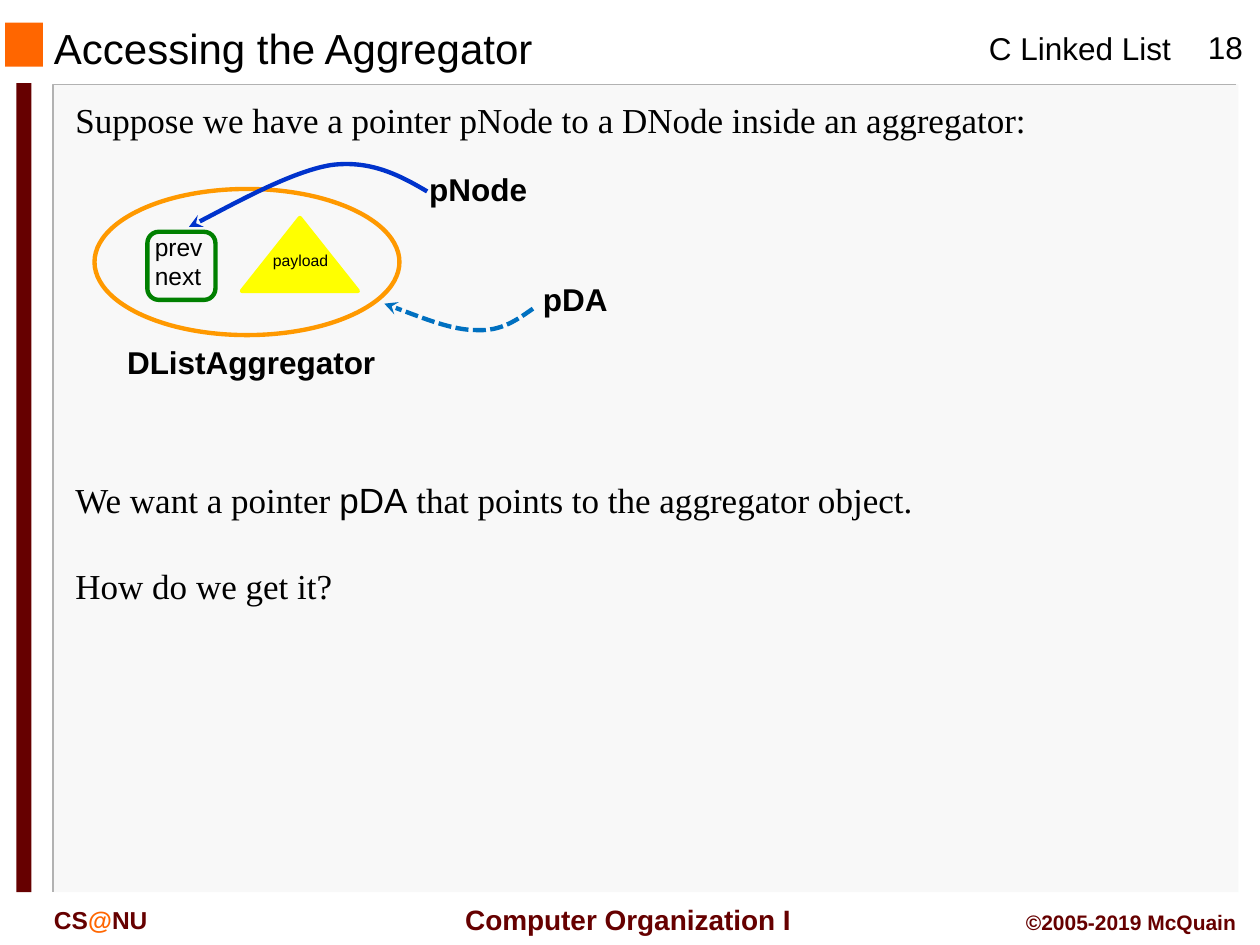
from pptx import Presentation
from pptx.dml.color import RGBColor
from pptx.enum.dml import MSO_LINE
from pptx.enum.shapes import MSO_SHAPE
from pptx.enum.text import MSO_ANCHOR, PP_ALIGN
from pptx.oxml.ns import qn
from pptx.util import Inches, Pt
from lxml.etree import SubElement

C = {"black": "000000", "maroon": "660000", "orange": "FF6600", "panel": "F8F8F8",
     "grey": "B2B2B2", "amber": "FF9900", "green": "008000", "yellow": "FFFF00",
     "blue": "0033CC", "sky": "0070C0"}
SANS, SERIF = "Arial", "Times New Roman"
LEFT, CENTER, RIGHT = PP_ALIGN.LEFT, PP_ALIGN.CENTER, PP_ALIGN.RIGHT
MIDDLE = MSO_ANCHOR.MIDDLE

# kind, box, fill, line
FRAME = [
    (MSO_SHAPE.RECTANGLE, (0.43, 0.67, 9.4, 6.41), "panel", None),
    (MSO_SHAPE.RECTANGLE, (0.04, 0.18, 0.3, 0.35), "orange", None),
    (MSO_SHAPE.RECTANGLE, (0.13, 0.66, 0.12, 6.42), "maroon", None),
]
AGGREGATOR = [
    (MSO_SHAPE.OVAL, (0.75, 1.5, 2.42, 1.16), None, "amber"),
    (MSO_SHAPE.ROUNDED_RECTANGLE, (1.17, 1.84, 0.54, 0.54), None, "green"),
    (MSO_SHAPE.ISOSCELES_TRIANGLE, (1.92, 1.73, 0.92, 0.58), "yellow", "yellow"),
]
PANEL_EDGE = [(9.81, 0.67), (0.42, 0.67), (0.42, 7.08)]

# start point, then three points for each Bezier segment
NODE_POINTER = [(3.39, 1.52), (3.17, 1.39), (2.94, 1.27), (2.63, 1.31),
                (2.31, 1.36), (1.69, 1.71), (1.5, 1.8)]
DA_POINTER = [(4.23, 2.45), (4.1, 2.54), (3.98, 2.63), (3.78, 2.62),
              (3.59, 2.62), (3.32, 2.51), (3.05, 2.41)]

# paragraphs are lists of (text, overrides) runs
TEXTS = [
    ((7.75, 0.18, 1.66, 0.4), [[("C Linked List", {})]], dict(wrap=False)),
    ((3.53, 7.11, 2.91, 0.37), [[("Computer Organization I", {})]],
     dict(size=16, color="maroon", bold=True, align=CENTER, anchor=MIDDLE)),
    ((9.39, 0.17, 0.67, 0.4), [[("18", {})]], dict(align=CENTER)),
    ((0.33, 7.13, 1.5, 0.33), [[("CS", {}), ("@", {"color": "orange"}), ("NU", {})]],
     dict(size=14, color="maroon", bold=True)),
    ((7.83, 7.17, 2.08, 0.3), [[("©2005-2019 McQuain", {})]],
     dict(size=12, color="maroon", bold=True, align=RIGHT)),
    ((0.33, 0.19, 6.33, 0.38), [[("Accessing the Aggregator", {})]],
     dict(size=24, anchor=MIDDLE)),
    ((0.5, 0.73, 9.17, 0.44),
     [[("Suppose we have a pointer pNode to a DNode inside an aggregator:", {})]],
     dict(size=20, font=SERIF)),
    ((0.5, 3.75, 9.17, 1.11),
     [[("We want a pointer ", {}), ("pDA", {"font": SANS}),
       (" that points to the aggregator object.", {})],
      [("How do we get it?", {})]],
     dict(size=20, font=SERIF, gap=25)),
    ((2.06, 1.94, 0.65, 0.25), [[("payload", {})]],
     dict(size=9, align=CENTER, wrap=False)),
    ((0.83, 2.67, 2.33, 0.4), [[("DListAggregator", {})]], dict(bold=True, align=CENTER)),
    ((1.13, 1.79, 0.68, 0.57), [[("prev", {})], [("next", {})]], dict(size=14)),
    ((3.25, 1.3, 1.09, 0.4), [[("pNode", {})]], dict(bold=True, align=CENTER)),
    ((4.02, 2.17, 1.09, 0.4), [[("pDA", {})]], dict(bold=True, align=CENTER)),
]


def rgb(name):
    return RGBColor.from_string(C[name])


def style(sp, fill=None, line=None, width=2.5):
    sp.shadow.inherit = False
    if fill:
        sp.fill.solid()
        sp.fill.fore_color.rgb = rgb(fill)
    else:
        sp.fill.background()
    if line:
        sp.line.color.rgb = rgb(line)
        sp.line.width = Pt(width)
    else:
        sp.line.fill.background()


def add_shape(s, kind, box, fill, line):
    sp = s.shapes.add_shape(kind, *map(Inches, box))
    style(sp, fill, line)


def add_polyline(s, points, line, width):
    pts = [(Inches(x), Inches(y)) for x, y in points]
    builder = s.shapes.build_freeform(*pts[0])
    builder.add_line_segments(pts[1:], close=False)
    sp = builder.convert_to_shape()
    style(sp, line=line, width=width)
    return sp


def add_curved_arrow(s, points, line, dash=None):
    """Turn each three line segments of a polyline into one Bezier segment."""
    sp = add_polyline(s, points, line, 2.5)
    segments = sp._element.xpath(".//a:lnTo")
    for i in range(0, len(segments), 3):
        curve = SubElement(segments[i].getparent(), qn("a:cubicBezTo"))
        for seg in segments[i:i + 3]:
            curve.append(seg[0])
            seg.getparent().remove(seg)
    if dash:
        sp.line.dash_style = dash
    SubElement(sp.line._get_or_add_ln(), qn("a:tailEnd"), type="stealth")


def add_text(s, box, paragraphs, size=18, font=SANS, color="black", bold=False,
             align=LEFT, anchor=MSO_ANCHOR.TOP, wrap=True, gap=0):
    tf = s.shapes.add_textbox(*map(Inches, box)).text_frame
    tf.word_wrap = wrap
    tf.vertical_anchor = anchor
    for i, runs in enumerate(paragraphs):
        p = tf.add_paragraph() if i else tf.paragraphs[0]
        p.alignment = align
        if i and gap:
            p.space_before = Pt(gap)
        for text, changes in runs:
            r = p.add_run()
            r.text = text
            r.font.size = Pt(size)
            r.font.bold = bold
            r.font.name = changes.get("font", font)
            r.font.color.rgb = rgb(changes.get("color", color))


def main():
    prs = Presentation()
    prs.slide_width, prs.slide_height = Inches(10), Inches(7.5)
    s = prs.slides.add_slide(prs.slide_layouts[6])
    for item in FRAME:
        add_shape(s, *item)
    add_polyline(s, PANEL_EDGE, "grey", 1)
    for item in AGGREGATOR:
        add_shape(s, *item)
    for box, paragraphs, fmt in TEXTS:
        add_text(s, box, paragraphs, **fmt)
    add_curved_arrow(s, NODE_POINTER, "blue")
    add_curved_arrow(s, DA_POINTER, "sky", MSO_LINE.SQUARE_DOT)
    prs.save("out.pptx")


if __name__ == "__main__":
    main()
